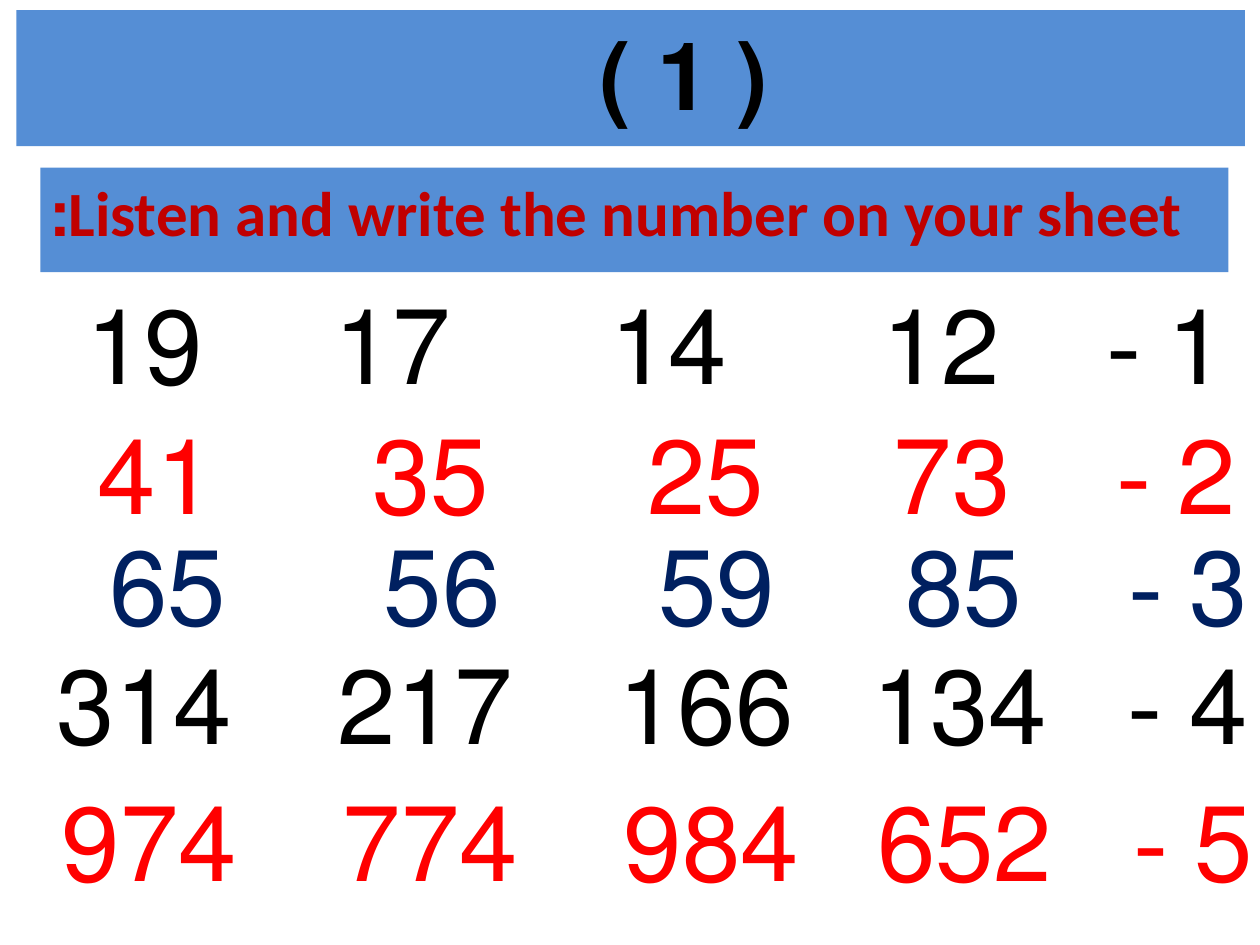
from lxml.etree import SubElement
from pptx import Presentation
from pptx.dml.color import RGBColor
from pptx.enum.shapes import MSO_SHAPE
from pptx.enum.text import MSO_ANCHOR, PP_ALIGN
from pptx.oxml.ns import qn
from pptx.util import Inches, Pt

BAND = "558ED5"
TWO_DIGIT_STOPS = (1.79, 3.75, 5.93, 8.11)
THREE_DIGIT_STOPS = (1.59, 3.6, 5.83, 8.06)

# left, top, width, colour, tab stops, label and numbers
ROWS = [
    (0.25, 2.17, 9.58, "000000", (1.8, 3.96, 6.15, 8.12), "1 -", "12 14 17 19"),
    (0.33, 3.2, 9.58, "FF0000", TWO_DIGIT_STOPS, "2 -", "73 25 35 41"),
    (0.42, 4.08, 9.58, "002060", TWO_DIGIT_STOPS, "3 -", "85 59 56 65"),
    (0.13, 5.03, 9.87, "000000", THREE_DIGIT_STOPS, "4 -", "134 166 217 314"),
    (0.17, 6.11, 9.87, "FF0000", THREE_DIGIT_STOPS, "5 -", "652 984 774 974"),
]


def colour(value):
    return RGBColor.from_string(value)


def write(box, text, size, ink, bold=False, align=PP_ALIGN.RIGHT, stops=()):
    """Fill a box with one right-to-left paragraph; stops count from the right."""
    frame = box.text_frame
    frame.word_wrap = True
    frame.vertical_anchor = MSO_ANCHOR.TOP
    para = frame.paragraphs[0]
    para.alignment = align
    properties = para._p.get_or_add_pPr()
    properties.set("rtl", "1")
    if stops:
        tabs = SubElement(properties, qn("a:tabLst"))
        for stop in stops:
            SubElement(tabs, qn("a:tab"), pos=str(Inches(stop)), algn="r")
    span = para.add_run()
    span.text = text
    span.font.name = "Calibri"
    span.font.size = Pt(size)
    span.font.bold = bold
    span.font.color.rgb = colour(ink)


def add_band(page, left, top, width, height):
    band = page.shapes.add_shape(
        MSO_SHAPE.RECTANGLE, *map(Inches, (left, top, width, height)))
    band.shadow.inherit = False
    band.fill.solid()
    band.fill.fore_color.rgb = colour(BAND)
    band.line.fill.background()
    return band


def add_number_row(page, left, top, width, ink, stops, label, numbers):
    box = page.shapes.add_textbox(*map(Inches, (left, top, width, 1.05)))
    write(box, "\t".join([label, *numbers.split()]), 60, ink, stops=stops)


def main():
    deck = Presentation()
    deck.slide_width, deck.slide_height = Inches(10), Inches(7.5)
    page = deck.slides.add_slide(deck.slide_layouts[6])

    title = add_band(page, 0.13, 0.08, 9.75, 1.08)
    title.text_frame.margin_left = Inches(0.94)
    write(title, "( 1 )", 54, "000000", bold=True, align=PP_ALIGN.CENTER)

    task = add_band(page, 0.32, 1.33, 9.43, 0.83)
    write(task, "Listen and write the number on your sheet:", 36, "C00000",
          bold=True, align=PP_ALIGN.LEFT)

    for row in ROWS:
        add_number_row(page, *row)
    deck.save("out.pptx")


if __name__ == "__main__":
    main()
